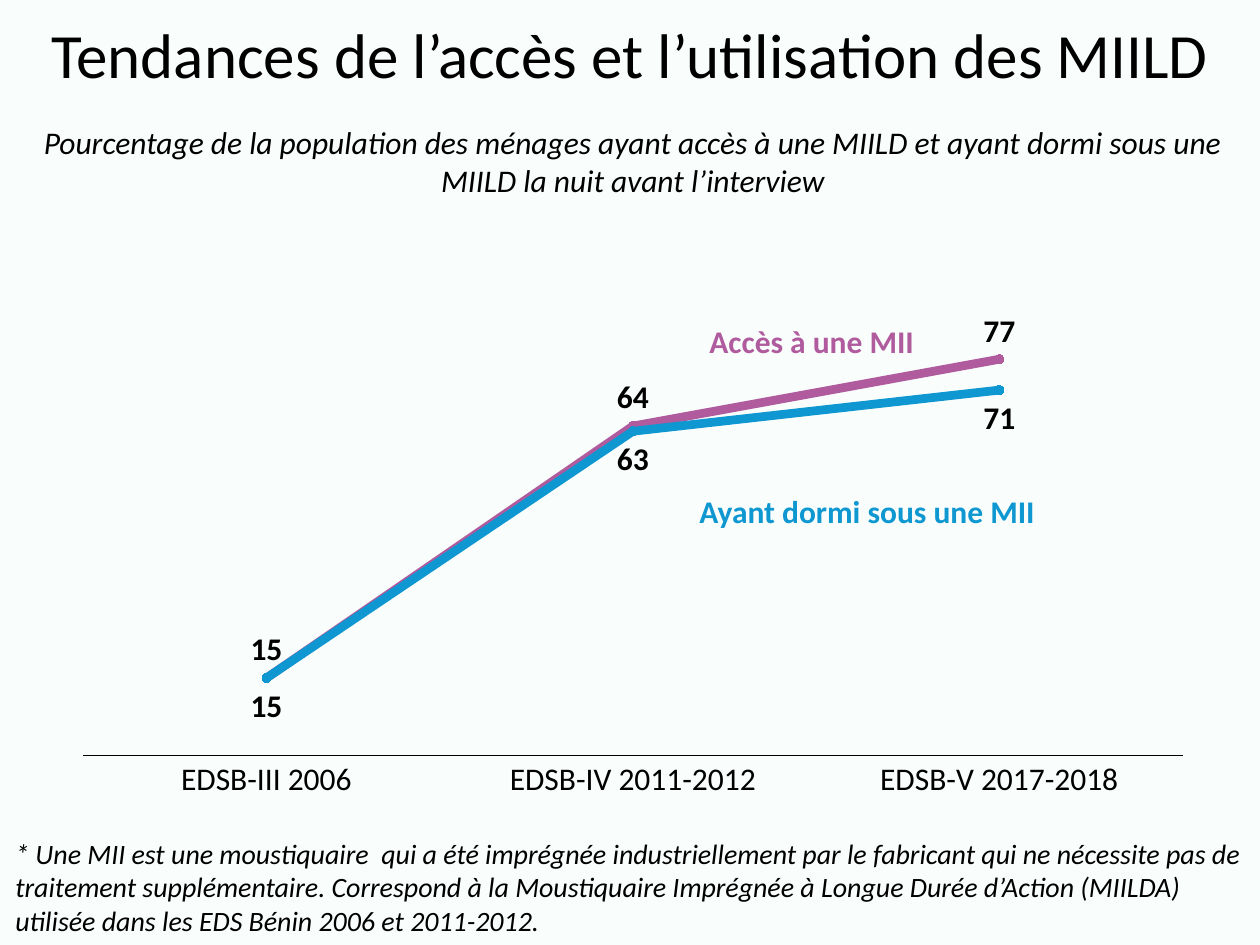
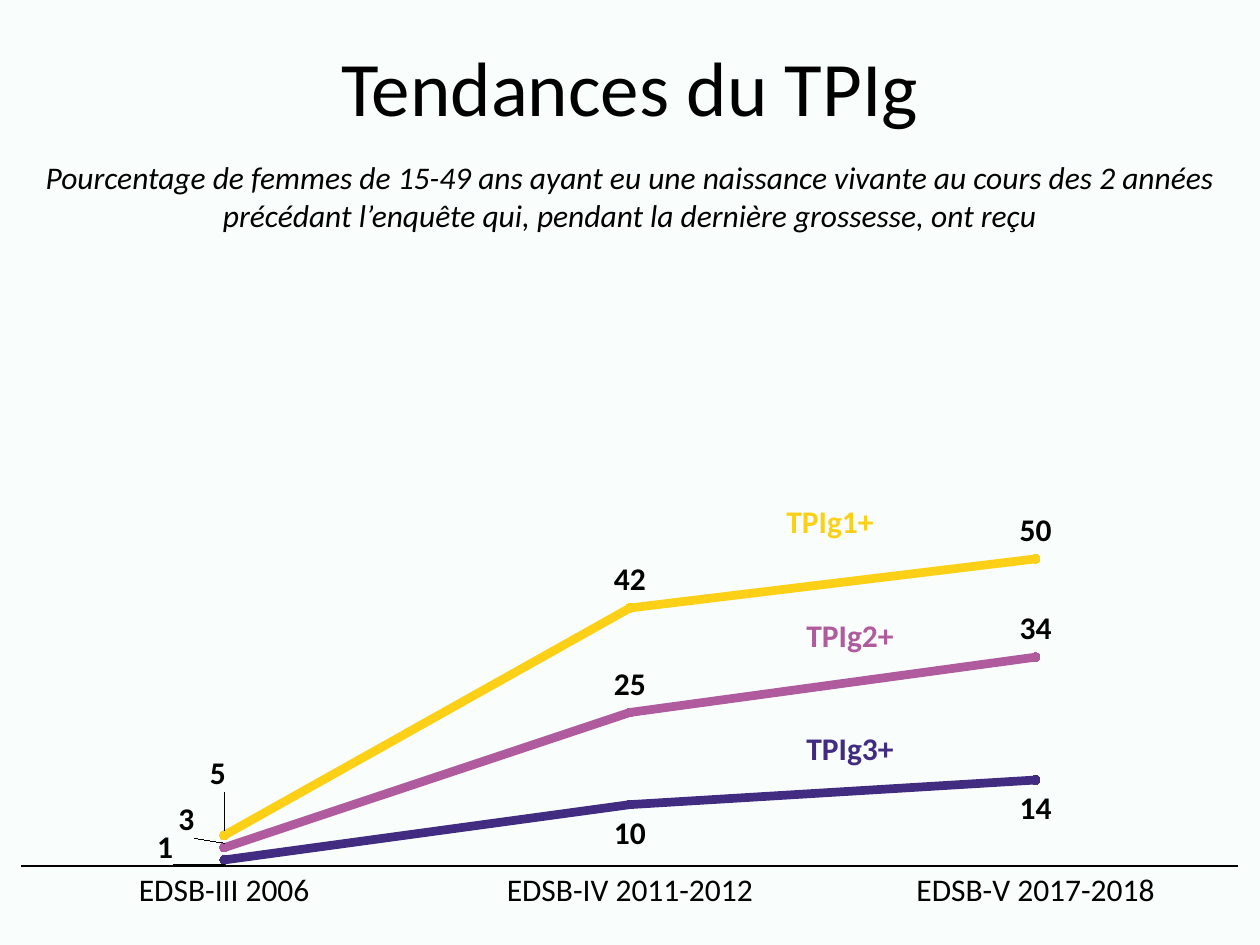
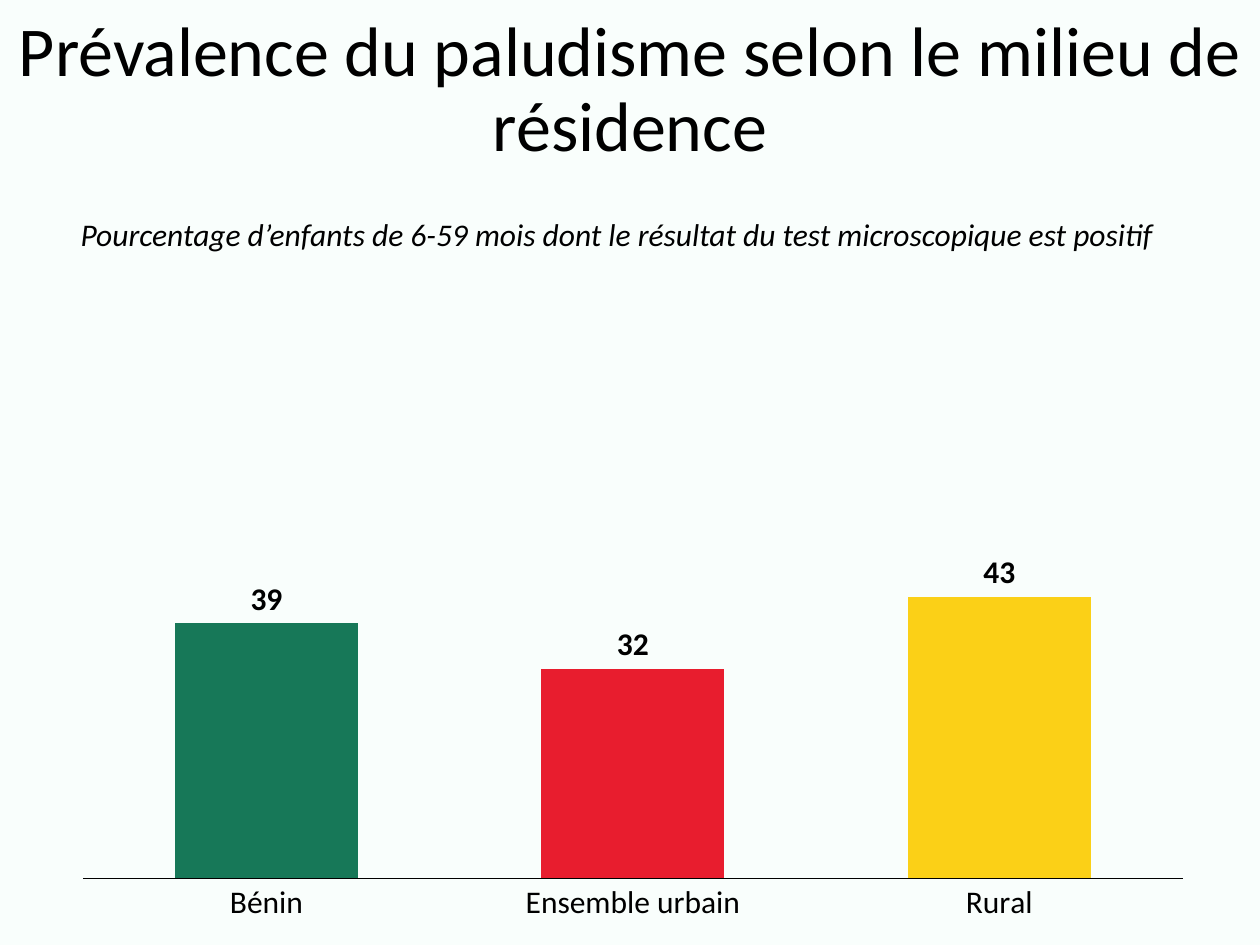
from lxml import etree
from pptx import Presentation
from pptx.chart.data import CategoryChartData
from pptx.dml.color import RGBColor
from pptx.enum.chart import XL_CHART_TYPE, XL_LABEL_POSITION, XL_MARKER_STYLE, XL_TICK_MARK
from pptx.enum.text import MSO_ANCHOR, MSO_AUTO_SIZE, PP_ALIGN
from pptx.oxml.ns import qn
from pptx.util import Emu, Pt

LINE = XL_CHART_TYPE.LINE_MARKERS
COLUMN = XL_CHART_TYPE.COLUMN_CLUSTERED
ABOVE = XL_LABEL_POSITION.ABOVE
BELOW = XL_LABEL_POSITION.BELOW
OUTSIDE_END = XL_LABEL_POSITION.OUTSIDE_END
CIRCLE = XL_MARKER_STYLE.CIRCLE
NO_TICK = XL_TICK_MARK.NONE
MIDDLE = MSO_ANCHOR.MIDDLE
TOP = MSO_ANCHOR.TOP
GROW = MSO_AUTO_SIZE.SHAPE_TO_FIT_TEXT
CENTER = PP_ALIGN.CENTER
LEFT = PP_ALIGN.LEFT

EMU_PER_PX = 914400 / 126
WIDTH, HEIGHT = 1260, 945
FONT = "Calibri"
BACKGROUND, BLACK = "F9FEFC", "000000"
PURPLE, BLUE, INDIGO = "AF5B9E", "0E97D0", "422C81"
YELLOW, GREEN, RED = "FBD017", "177858", "E81D2E"
SURVEYS = ["EDSB-III 2006", "EDSB-IV 2011-2012", "EDSB-V 2017-2018"]


def px(length):
    return Emu(round(length * EMU_PER_PX))


def rgb(color):
    return RGBColor.from_string(color)


def set_font(font, size, color=BLACK, bold=False, italic=False):
    font.name = FONT
    font.size = Pt(size)
    font.bold = bold
    font.italic = italic
    font.color.rgb = rgb(color)


def add_text(slide, box, text, size=18, align=LEFT, **style):
    shape = slide.shapes.add_textbox(*map(px, box))
    frame = shape.text_frame
    frame.word_wrap = True
    frame.auto_size = GROW
    frame.vertical_anchor = TOP
    paragraph = frame.paragraphs[0]
    paragraph.text = text
    paragraph.alignment = align
    set_font(paragraph.font, size, **style)
    return frame


def add_title(slide, text, size, height):
    frame = add_text(slide, (0, 0, WIDTH, height), text, size, CENTER)
    frame.auto_size = MSO_AUTO_SIZE.NONE
    frame.vertical_anchor = MIDDLE
    frame.paragraphs[0].line_spacing = 0.9


def add_subtitle(slide, box, text):
    add_text(slide, box, text, align=CENTER, italic=True)


def add_series_name(slide, box, text, color):
    add_text(slide, box, text, color=color, bold=True)


def add_layout(parent, index, **values):
    for old_layout in parent.findall(qn("c:layout")):
        parent.remove(old_layout)
    layout = etree.Element(qn("c:layout"))
    manual = etree.SubElement(layout, qn("c:manualLayout"))
    for name, value in values.items():
        etree.SubElement(manual, qn(f"c:{name}")).set("val", str(value))
    parent.insert(index, layout)


def add_chart(slide, box, kind, categories, rows, top, height):
    data = CategoryChartData()
    data.categories = categories
    for number, values in enumerate(rows, 1):
        data.add_series(f"Series {number}", values)
    chart = slide.shapes.add_chart(kind, *map(px, box), data).chart
    chart.has_legend = False
    chart.has_title = False
    set_font(chart.font, 10)
    value_axis = chart.value_axis
    value_axis.minimum_scale = 0
    value_axis.maximum_scale = 100
    value_axis.has_major_gridlines = False
    value_axis.visible = False
    category_axis = chart.category_axis
    category_axis.major_tick_mark = NO_TICK
    category_axis.format.line.color.rgb = rgb(BLACK)
    category_axis.format.line.width = Pt(0.75)
    set_font(category_axis.tick_labels.font, 18)
    chart.plots[0].vary_by_categories = False
    plot_area = chart.element.find(f".//{qn('c:plotArea')}")
    add_layout(plot_area, 0, layoutTarget="inner", xMode="edge", yMode="edge",
               x=0.017, y=top, w=0.966, h=height)
    return chart


def show_values(series, position):
    labels = series.data_labels
    labels.show_value = True
    labels.position = position
    set_font(labels.font, 18, bold=True)


def move_first_label(series, position, shift):
    label = series.points[0].data_label
    set_font(label.font, 18, bold=True)
    label.position = position
    element = series.data_labels._element.find(qn("c:dLbl"))
    add_layout(element, 1, x=shift[0], y=shift[1])


def add_line_chart(slide, box, lines, top):
    chart = add_chart(slide, box, LINE, SURVEYS, [line[0] for line in lines], top, 0.85)
    for series, (_, color, position, shift) in zip(chart.plots[0].series, lines):
        series.smooth = False
        series.format.line.color.rgb = rgb(color)
        series.format.line.width = Pt(5)
        series.marker.style = CIRCLE
        series.marker.size = 5
        for part in (series.marker.format.fill, series.marker.format.line.fill):
            part.solid()
            part.fore_color.rgb = rgb(color)
        show_values(series, position)
        if shift:
            move_first_label(series, position, shift)


def add_column_chart(slide, box, columns):
    categories, values, colors = zip(*columns)
    chart = add_chart(slide, box, COLUMN, categories, [values], 0.002, 0.906)
    plot = chart.plots[0]
    plot.gap_width = 100
    series = plot.series[0]
    series.format.fill.solid()
    series.format.fill.fore_color.rgb = rgb(colors[0])
    for index, color in enumerate(colors):
        fill = series.points[index].format.fill
        fill.solid()
        fill.fore_color.rgb = rgb(color)
    show_values(series, OUTSIDE_END)


def add_slide(presentation):
    slide = presentation.slides.add_slide(presentation.slide_layouts[6])
    slide.background.fill.solid()
    slide.background.fill.fore_color.rgb = rgb(BACKGROUND)
    return slide


def build_net_trends(slide):
    add_title(slide, "Tendances de l’accès et l’utilisation des MIILD", 36, 117)
    add_line_chart(slide, (64, 209, 1138, 605), [
        ((15, 64, 77), PURPLE, ABOVE, None),
        ((15, 63, 71), BLUE, BELOW, None),
    ], 0.053)
    add_series_name(slide, (697, 316, 252, 50), "Accès à une MII", PURPLE)
    add_series_name(slide, (687, 486, 384, 50), "Ayant dormi sous une MII", BLUE)
    add_subtitle(slide, (3, 117, WIDTH, 89),
                 "Pourcentage de la population des ménages ayant accès à une MIILD "
                 "et ayant dormi sous une MIILD la nuit avant l’interview")
    add_text(slide, (3, 830, WIDTH, 115),
             "* Une MII est une moustiquaire  qui a été imprégnée industriellement par le "
             "fabricant qui ne nécessite pas de traitement supplémentaire. Correspond à la "
             "Moustiquaire Imprégnée à Longue Durée d’Action (MIILDA) utilisée dans les "
             "EDS Bénin 2006 et 2011-2012.", 16, italic=True)


def build_treatment_trends(slide):
    add_title(slide, "Tendances du TPIg", 44, 183)
    add_subtitle(slide, (0, 152, WIDTH, 89),
                 "Pourcentage de femmes de 15-49 ans ayant eu une naissance vivante au cours "
                 "des 2 années précédant l’enquête qui, pendant la dernière grossesse, ont reçu")
    add_line_chart(slide, (0, 222, WIDTH, 723), [
        ((1, 10, 14), INDIGO, BELOW, (-0.047, -0.057)),
        ((3, 25, 34), PURPLE, ABOVE, (-0.03, 0)),
        ((5, 42, 50), YELLOW, ABOVE, (-0.005, -0.047)),
    ], 0.041)
    add_series_name(slide, (794, 610, 252, 50), "TPIg2+", PURPLE)
    add_series_name(slide, (794, 723, 287, 50), "TPIg3+", INDIGO)
    add_series_name(slide, (774, 496, 252, 50), "TPIg1+", YELLOW)


def build_prevalence(slide):
    add_title(slide, "Prévalence du paludisme selon le milieu de résidence", 40, 183)
    add_column_chart(slide, (64, 222, 1138, 723), [
        ("Bénin", 39, GREEN),
        ("Ensemble urbain", 32, RED),
        ("Rural", 43, YELLOW),
    ])
    add_subtitle(slide, (-13, 209, WIDTH, 50),
                 "Pourcentage d’enfants de 6-59 mois dont le résultat du test "
                 "microscopique est positif")


def main():
    presentation = Presentation()
    presentation.slide_width = px(WIDTH)
    presentation.slide_height = px(HEIGHT)
    for build in (build_net_trends, build_treatment_trends, build_prevalence):
        build(add_slide(presentation))
    presentation.save("out.pptx")


if __name__ == "__main__":
    main()
